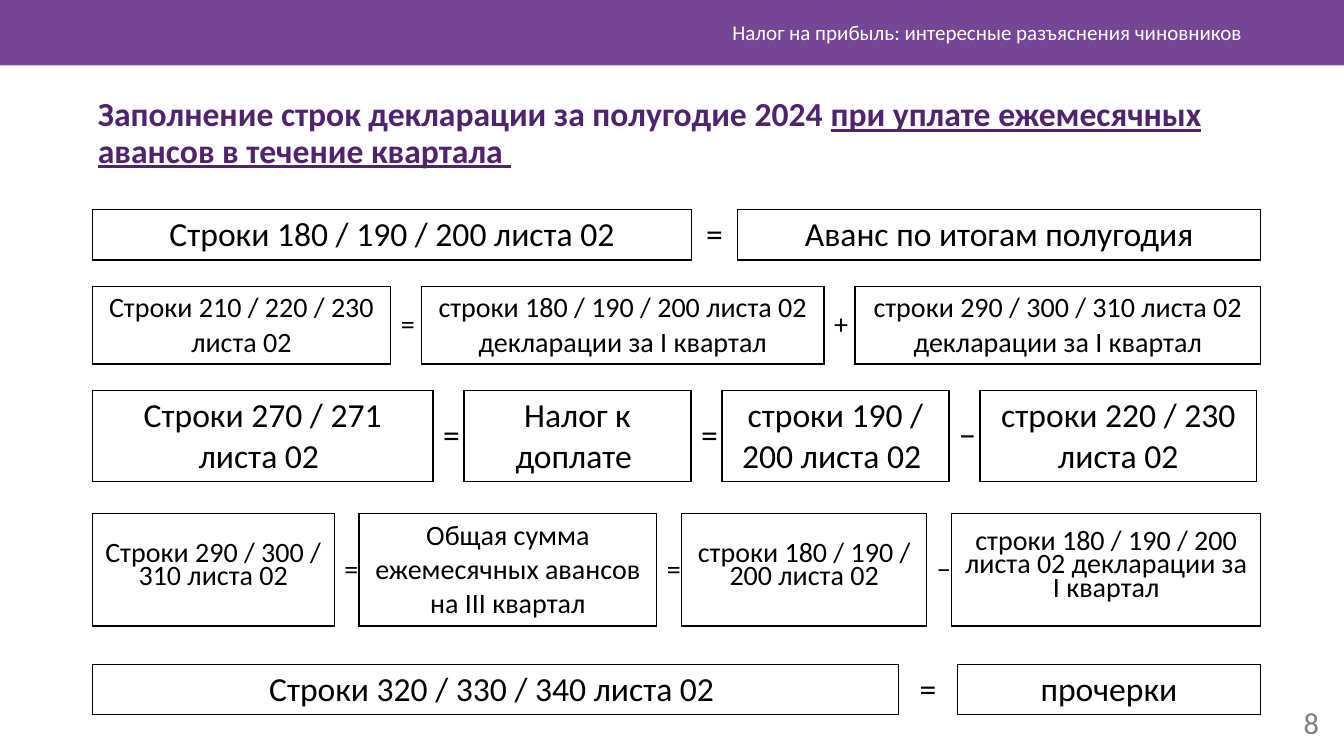
"""Build the slide on filling in half-year profit tax return lines."""
from dataclasses import dataclass
from typing import Optional

from lxml.etree import SubElement
from pptx import Presentation
from pptx.dml.color import RGBColor
from pptx.enum.shapes import MSO_SHAPE as Shape
from pptx.enum.text import MSO_ANCHOR as Anchor, MSO_AUTO_SIZE as AutoSize, PP_ALIGN as Align
from pptx.oxml.ns import qn
from pptx.util import Emu, Inches, Pt

WIDTH, HEIGHT = Inches(13.33), Inches(7.5)
LEFT = 6.87
SIGNS = "=+−"


@dataclass(frozen=True)
class Theme:
    font: str = "Calibri"
    bar: str = "764696"
    title: str = "50236E"
    text: str = "000000"
    light: str = "FFFFFF"
    muted: str = "808080"
    large: float = 24
    medium: float = 20
    header: float = 15
    number: float = 21.7
    tight: float = 17
    border: float = 1


THEME = Theme()


@dataclass(frozen=True)
class Term:
    width: float
    text: str
    spacing: Optional[float] = None


@dataclass(frozen=True)
class Formula:
    top: float
    height: float
    size: float
    terms: tuple[Term, ...]


FORMULAS = (
    Formula(27.7, 6.7, THEME.large, (
        Term(44.6, "Строки 180 / 190 / 200 листа 02"),
        Term(3.4, "="),
        Term(38.95, "Аванс по итогам полугодия"),
    )),
    Formula(37.85, 10.3, THEME.medium, (
        Term(22.2, "Строки 210 / 220 / 230 листа 02"),
        Term(2.3, "="),
        Term(29.95, "строки 180 / 190 / 200 листа 02 декларации за I квартал"),
        Term(2.3, "+"),
        Term(30.2, "строки 290 / 300 / 310 листа 02 декларации за I квартал"),
    )),
    Formula(51.6, 12.1, THEME.large, (
        Term(25.35, "Строки 270 / 271 листа 02 "),
        Term(2.3, "="),
        Term(16.9, "Налог к доплате "),
        Term(2.3, "="),
        Term(16.9, "строки 190 / 200 листа 02 "),
        Term(2.3, "−"),
        Term(20.6, "строки 220 / 230 листа 02"),
    )),
    Formula(67.9, 14.9, THEME.medium, (
        Term(18, "Строки 290 / 300 / 310 листа 02", THEME.tight),
        Term(1.85, "="),
        Term(22.15, "Общая сумма ежемесячных авансов на III квартал"),
        Term(1.85, "="),
        Term(18.25, "строки 180 / 190 / 200 листа 02", THEME.tight),
        Term(1.85, "−"),
        Term(23, "строки 180 / 190 / 200 листа 02 декларации за I квартал", THEME.tight),
    )),
    Formula(87.85, 6.7, THEME.large, (
        Term(60, "Строки 320 / 330 / 340 листа 02 "),
        Term(4.35, "="),
        Term(22.6, "прочерки"),
    )),
)


def across(share: float) -> Emu:
    """Turn a percentage of the slide width into a length."""
    return Emu(round(WIDTH * share / 100))


def down(share: float) -> Emu:
    """Turn a percentage of the slide height into a length."""
    return Emu(round(HEIGHT * share / 100))


def style(p, size: float, color: str, align: Align, bold: bool = False) -> None:
    """Set the font and alignment of a paragraph."""
    p.alignment = align
    p.font.name, p.font.size, p.font.bold = THEME.font, Pt(size), bold
    p.font.color.rgb = RGBColor.from_string(color)


def add_label(slide, left: float, top: float, width: float, height: float,
              text: str, size: float, color: str) -> None:
    """Add a right-aligned line of text."""
    tf = slide.shapes.add_textbox(across(left), down(top), across(width), down(height)).text_frame
    tf.word_wrap, tf.vertical_anchor = True, Anchor.MIDDLE
    p = tf.paragraphs[0]
    p.text = text
    style(p, size, color, Align.RIGHT)


def add_bar(slide) -> None:
    """Add the coloured band along the top."""
    sp = slide.shapes.add_shape(Shape.RECTANGLE, 0, 0, WIDTH, down(8.67))
    sp.shadow.inherit = False
    sp.fill.solid()
    sp.fill.fore_color.rgb = RGBColor.from_string(THEME.bar)
    sp.line.fill.background()


def fill_title(slide) -> None:
    """Place the title and underline its second half."""
    sp = slide.shapes.title
    sp.left, sp.top, sp.width, sp.height = across(6.53), down(12.27), across(86.27), down(12.7)
    tf = sp.text_frame
    tf.word_wrap, tf.auto_size, tf.vertical_anchor = True, AutoSize.NONE, Anchor.TOP
    p = tf.paragraphs[0]
    p.line_spacing = 0.9
    p.add_run().text = "Заполнение строк декларации за полугодие 2024 "
    r = p.add_run()
    r.text = "при уплате ежемесячных авансов в течение квартала "
    r.font.underline = True
    style(p, THEME.large, THEME.title, Align.LEFT, bold=True)


def set_borders(cell, sides: str) -> None:
    """Draw the named sides of a cell and hide the others."""
    props = cell._tc.get_or_add_tcPr()
    for i, side in enumerate("LRTB"):
        line = SubElement(props, qn(f"a:ln{side}"), w=str(Pt(THEME.border)))
        if side in sides:
            SubElement(SubElement(line, qn("a:solidFill")), qn("a:srgbClr"), val=THEME.text)
        else:
            SubElement(line, qn("a:noFill"))
        props.insert(i, line)


def add_formula(slide, formula: Formula) -> None:
    """Add one formula as a single-row table of boxes and signs."""
    terms = formula.terms
    total = sum(term.width for term in terms)
    table = slide.shapes.add_table(1, len(terms), across(LEFT), down(formula.top),
                                   across(total), down(formula.height)).table
    table.first_row = table.horz_banding = False
    for i, term in enumerate(terms):
        table.columns[i].width = across(term.width)
        cell = table.cell(0, i)
        cell.vertical_anchor = Anchor.MIDDLE
        cell.fill.background()
        set_borders(cell, "LR" if term.text in SIGNS else "LRTB")
        p = cell.text_frame.paragraphs[0]
        p.text = term.text
        if term.spacing:
            p.line_spacing = Pt(term.spacing)
        style(p, formula.size, THEME.text, Align.CENTER)


def main() -> None:
    """Build and save the slide."""
    prs = Presentation()
    prs.slide_width, prs.slide_height = WIDTH, HEIGHT
    slide = prs.slides.add_slide(prs.slide_layouts[5])
    add_bar(slide)
    add_label(slide, 93.85, 92.93, 5.03, 5.33, "8", THEME.number, THEME.muted)
    add_label(slide, 26.56, 1.6, 66.6, 5.33,
              "Налог на прибыль: интересные разъяснения чиновников", THEME.header, THEME.light)
    fill_title(slide)
    for formula in FORMULAS:
        add_formula(slide, formula)
    prs.save("out.pptx")


if __name__ == "__main__":
    main()
